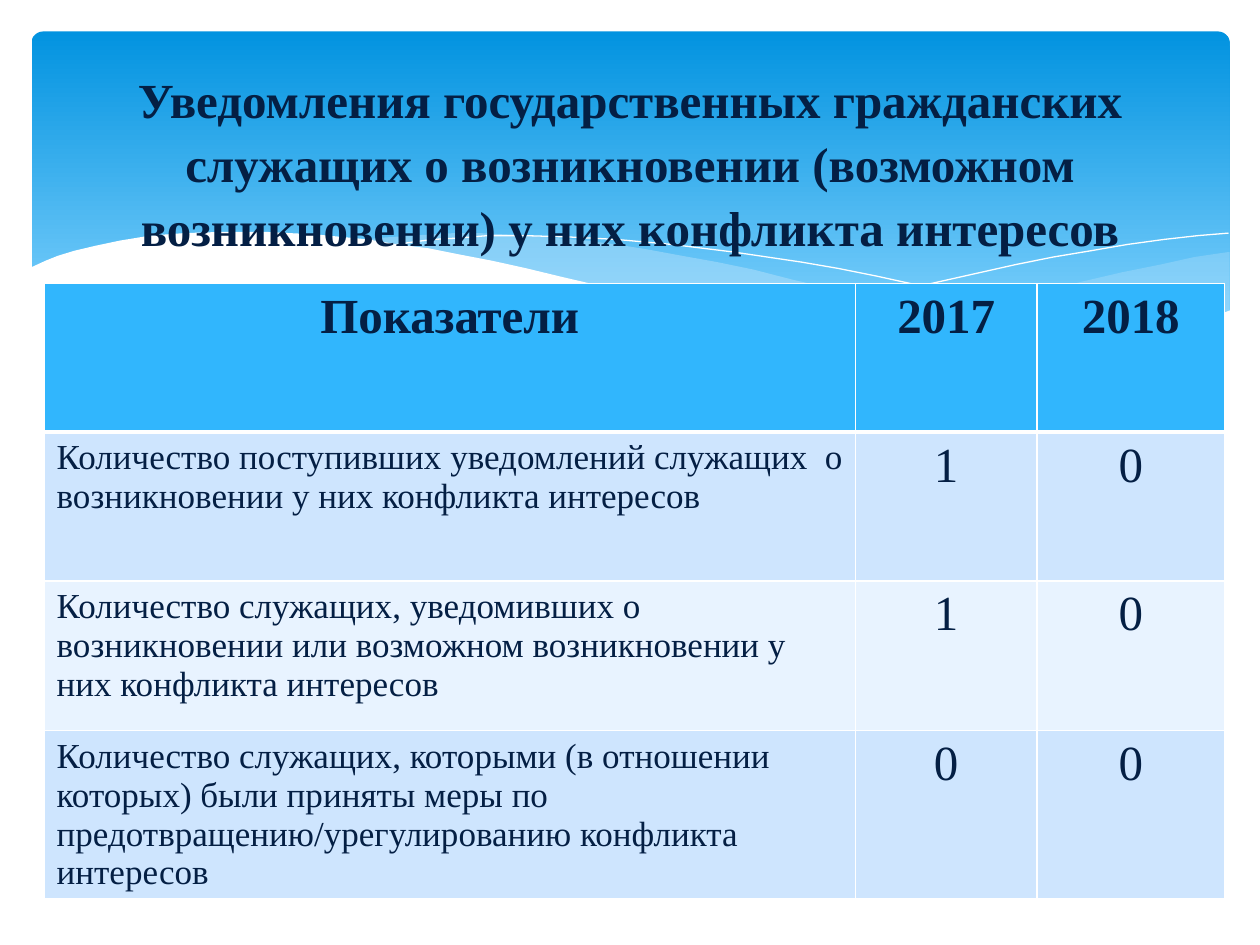
from lxml import etree
from pptx import Presentation
from pptx import util as u
from pptx.dml.color import RGBColor
from pptx.enum import shapes, text
from pptx.oxml import ns

NAVY, WHITE, SKY = "041F44", "FFFFFF", "C6E7FC"

RIGHT_FILL = [
    (9.75, 2), (9.48, 2.04), (9.21, 2.1), (8.91, 2.16), (8.61, 2.23),
    (8.05, 2.37), (7.53, 2.48), (7.06, 2.57), (6.61, 2.65), (6.91, 2.69),
    (7.19, 2.72), (7.45, 2.75), (7.69, 2.77), (8.03, 2.78), (8.35, 2.77),
    (8.63, 2.75), (8.89, 2.72), (9.13, 2.67), (9.35, 2.62), (9.49, 2.57),
    (9.63, 2.52), (9.76, 2.47), (9.76, 2)]
MIDDLE_FILL = [
    (8.93, 2.73), (8.66, 2.69), (8.37, 2.65), (8.07, 2.6), (7.75, 2.54),
    (7.41, 2.47), (7.06, 2.4), (6.68, 2.31), (6.29, 2.22), (5.98, 2.14),
    (5.69, 2.08), (5.41, 2.03), (5.14, 1.98), (4.89, 1.94), (4.65, 1.91),
    (4.42, 1.89), (4.2, 1.87), (3.99, 1.86), (3.8, 1.85), (3.61, 1.85),
    (3.28, 1.87), (2.99, 1.89), (2.86, 1.91), (3.23, 1.96), (3.62, 2.03),
    (4.04, 2.11), (4.49, 2.22), (4.91, 2.32), (5.3, 2.4), (5.66, 2.48),
    (6.01, 2.55), (6.34, 2.61), (6.65, 2.66), (6.95, 2.7), (7.22, 2.74),
    (7.48, 2.76), (7.73, 2.77), (8.07, 2.78), (8.38, 2.78), (8.67, 2.76)]
LONG_LINE = [
    (3.09, 1.95), (3.28, 1.92), (3.44, 1.9), (3.63, 1.89), (3.87, 1.87),
    (4.16, 1.87), (4.5, 1.88), (4.89, 1.9), (5.33, 1.94), (5.82, 2),
    (6.36, 2.08), (6.65, 2.13), (6.95, 2.19), (7.27, 2.26), (7.6, 2.33),
    (7.95, 2.41), (8.31, 2.51), (8.69, 2.61), (9.07, 2.72)]
RIGHT_LINE = [
    (6.13, 2.57), (6.53, 2.46), (6.95, 2.35), (7.48, 2.23), (8.06, 2.1),
    (8.36, 2.04), (8.66, 1.99), (8.95, 1.94), (9.24, 1.9), (9.51, 1.87),
    (9.75, 1.85)]
WHITE_FILL = [
    (9.77, 2.46), (9.59, 2.53), (9.4, 2.59), (9.2, 2.65), (8.99, 2.69),
    (8.75, 2.73), (8.5, 2.75), (8.23, 2.77), (7.93, 2.76), (7.61, 2.75),
    (7.26, 2.72), (6.88, 2.68), (6.48, 2.62), (6.03, 2.54), (5.55, 2.45),
    (5.03, 2.33), (4.47, 2.2), (4.18, 2.13), (3.91, 2.07), (3.65, 2.02),
    (3.4, 1.97), (3.16, 1.94), (2.92, 1.9), (2.71, 1.88), (2.5, 1.86),
    (2.3, 1.85), (2.11, 1.84), (1.77, 1.84), (1.46, 1.85), (1.19, 1.87),
    (0.95, 1.91), (0.76, 1.95), (0.59, 1.99), (0.46, 2.03), (0.36, 2.07),
    (0.23, 2.13), (0.23, 3.29), (9.77, 3.29)]

ROWS = [
    ("Показатели", "2017", "2018"),
    ("Количество поступивших уведомлений служащих  о возникновении "
     "у них конфликта интересов", "1", "0"),
    ("Количество служащих, уведомивших о возникновении или возможном "
     "возникновении у них конфликта интересов", "1", "0"),
    ("Количество служащих, которыми (в отношении которых) были приняты меры "
     "по предотвращению/урегулированию конфликта интересов", "0", "0")]


def color(value):
    return RGBColor.from_string(value)


class Deck:
    font = {"name": "Times New Roman", "size": u.Pt(28), "bold": False}
    fills = ["31B6FD", "CEE5FE", "E8F3FF", "CEE5FE"]

    def __init__(self, prs):
        self.s = prs.slides.add_slide(prs.slide_layouts[6])

    def label(self, tf, words, align=text.PP_ALIGN.CENTER, **changes):
        p = tf.paragraphs[0]
        p.alignment = align
        r = p.add_run()
        r.text = words
        for key, value in {**self.font, **changes}.items():
            setattr(r.font, key, value)
        r.font.color.rgb = color(NAVY)
        return p

    def banner(self, x, y, w, h, top, bottom):
        sp = self.s.shapes.add_shape(
            shapes.MSO_SHAPE.ROUNDED_RECTANGLE, *map(u.Inches, (x, y, w, h)))
        sp.adjustments[0] = 0.034
        sp.shadow.inherit = False
        sp.line.fill.background()
        sp.fill.gradient()
        sp.fill.gradient_angle = 270
        for stop, position, shade in zip(sp.fill.gradient_stops, (0, 0.9), (top, bottom)):
            stop.position = position
            stop.color.rgb = color(shade)

    def wave(self, points, fill=None, opacity=100):
        start, *rest = [(u.Inches(x), u.Inches(y)) for x, y in points]
        builder = self.s.shapes.build_freeform(*start)
        builder.add_line_segments(rest, close=fill is not None)
        sp = builder.convert_to_shape()
        sp.shadow.inherit = False
        if fill is None:
            sp.fill.background()
            sp.line.color.rgb = color(WHITE)
            sp.line.width = u.Pt(0)
            return
        sp.line.fill.background()
        sp.fill.solid()
        sp.fill.fore_color.rgb = color(fill)
        if opacity < 100:
            shade = sp._element.spPr.find(".//" + ns.qn("a:srgbClr"))
            etree.SubElement(shade, ns.qn("a:alpha"), val=str(opacity * 1000))

    def borders(self, cell, **widths):
        tcPr = cell._tc.get_or_add_tcPr()
        for i, side in enumerate("LRTB"):
            ln = etree.Element(ns.qn("a:ln" + side), w=str(u.Pt(widths.get(side, 1))))
            fill = etree.SubElement(ln, ns.qn("a:solidFill"))
            etree.SubElement(fill, ns.qn("a:srgbClr"), val=WHITE)
            tcPr.insert(i, ln)

    def table(self, x, y, widths, heights, rows):
        tbl = self.s.shapes.add_table(
            len(rows), len(widths), *map(u.Inches, (x, y, sum(widths), sum(heights)))).table
        for column, width in zip(tbl.columns, widths):
            column.width = u.Inches(width)
        for i, (row, height) in enumerate(zip(tbl.rows, heights)):
            row.height = u.Inches(height)
            for j, cell in enumerate(row.cells):
                cell.fill.solid()
                cell.fill.fore_color.rgb = color(self.fills[i])
                self.borders(cell, **({"B": 3} if i == 0 else {"T": 3} if i == 1 else {}))
                if i and j == 0:
                    self.label(cell.text_frame, rows[i][j], text.PP_ALIGN.LEFT, size=u.Pt(20))
                else:
                    self.label(cell.text_frame, rows[i][j], bold=i == 0)

    def title(self, x, y, w, h, words):
        tf = self.s.shapes.add_textbox(*map(u.Inches, (x, y, w, h))).text_frame
        tf.word_wrap = True
        tf.vertical_anchor = text.MSO_ANCHOR.MIDDLE
        self.label(tf, words, bold=True).line_spacing = 1.09


def main():
    prs = Presentation()
    prs.slide_width, prs.slide_height = u.Inches(10), u.Inches(7.5)
    deck = Deck(prs)
    deck.banner(0.25, 0.25, 9.51, 2.7, "0293E0", "83D3FE")
    deck.wave(RIGHT_FILL, SKY, 29)
    deck.wave(MIDDLE_FILL, SKY, 40)
    deck.wave(LONG_LINE)
    deck.wave(RIGHT_LINE)
    deck.wave(WHITE_FILL, WHITE)
    deck.table(0.35, 2.25, (6.44, 1.44, 1.49), (1.18, 1.18, 1.19, 1.19), ROWS)
    deck.title(0.5, 0.92, 9, 0.71,
               "Уведомления государственных гражданских служащих о возникновении "
               "(возможном возникновении) у них конфликта интересов")
    prs.save("out.pptx")


if __name__ == "__main__":
    main()
